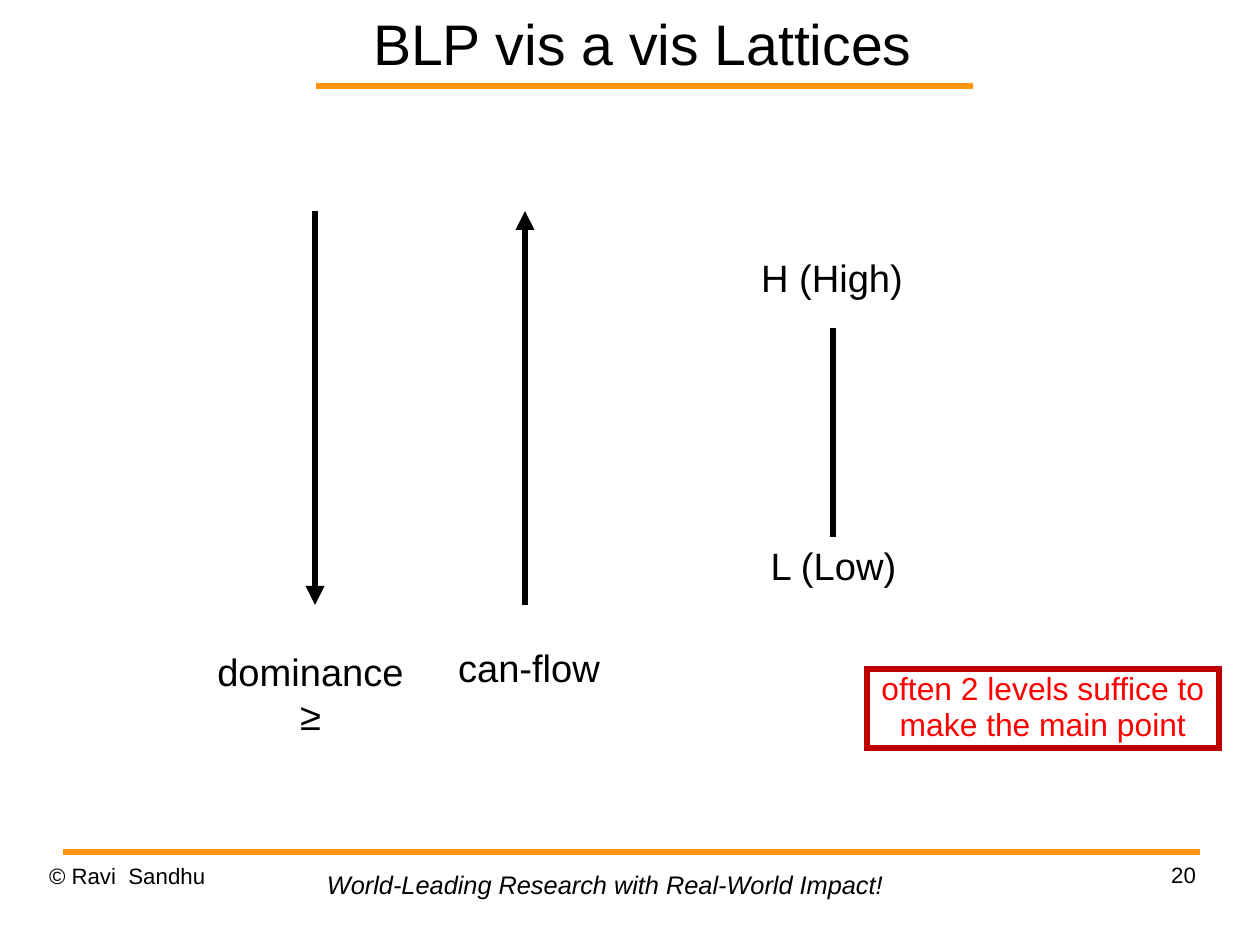
from dataclasses import dataclass

from lxml.etree import SubElement
from pptx import Presentation
from pptx.dml.color import RGBColor
from pptx.enum.shapes import MSO_CONNECTOR, MSO_SHAPE
from pptx.enum.text import MSO_ANCHOR, MSO_AUTO_SIZE, PP_ALIGN
from pptx.oxml.ns import qn
from pptx.util import Emu, Pt


@dataclass(frozen=True)
class Theme:
    """Colours, type sizes and line widths of the slide."""
    font: str = "Arial"
    ink: str = "000000"
    rule: str = "FF950E"
    border: str = "C00000"
    alert: str = "FF0000"
    title: int = 36
    label: int = 24
    callout: int = 20
    motto: int = 16
    footer: int = 14
    stroke: float = 4
    rule_stroke: float = 4.31


THEME = Theme()
EMU_PER_PX = 8000
NO_INSET = (0, 0)
LABEL_INSET = (8, 3)
MOTTO_INSET = (11, 6)


def px(length):
    """Turn whole px into EMU."""
    return Emu(length * EMU_PER_PX)


def fill_text(box, lines, size, color=THEME.ink, align=PP_ALIGN.LEFT, inset=LABEL_INSET,
              spacing=None, wrap=True, grow=False, anchor=MSO_ANCHOR.TOP, italic=False):
    """Write one paragraph per line into a box."""
    frame = box.text_frame
    frame.margin_left = frame.margin_right = px(inset[0])
    frame.margin_top = frame.margin_bottom = px(inset[1])
    frame.word_wrap = wrap
    frame.auto_size = MSO_AUTO_SIZE.SHAPE_TO_FIT_TEXT if grow else MSO_AUTO_SIZE.NONE
    frame.vertical_anchor = anchor
    for index, line in enumerate(lines):
        para = frame.add_paragraph() if index else frame.paragraphs[0]
        para.alignment = align
        if spacing:
            para.line_spacing = spacing
        span = para.add_run()
        span.text = line
        span.font.name = THEME.font
        span.font.size = Pt(size)
        span.font.italic = italic
        span.font.color.rgb = RGBColor.from_string(color)


def add_text(page, bounds, lines, size, **style):
    """Add a text box."""
    box = page.shapes.add_textbox(*map(px, bounds))
    fill_text(box, lines, size, **style)


def add_label(page, bounds, lines, spacing=0.87, align=PP_ALIGN.CENTER):
    """Add a diagram label that grows with its text."""
    add_text(page, bounds, lines, THEME.label, align=align, spacing=spacing,
             wrap=False, grow=True)


def add_line(page, start, end, color=THEME.ink, width=THEME.stroke, arrow=False):
    """Add a straight line, with an arrowhead at its end if wanted."""
    line = page.shapes.add_connector(MSO_CONNECTOR.STRAIGHT, *map(px, start + end))
    line.line.color.rgb = RGBColor.from_string(color)
    line.line.width = Pt(width)
    if arrow:
        SubElement(line.line._get_or_add_ln(), qn("a:tailEnd"), type="triangle")
    SubElement(line._element.spPr, qn("a:effectLst"))


def add_rule(page, left, right, top):
    """Add a horizontal coloured rule."""
    add_line(page, (left, top), (right, top), THEME.rule, THEME.rule_stroke)


def add_callout(page, bounds, text):
    """Add a remark in a sharp-cornered outline."""
    box = page.shapes.add_shape(MSO_SHAPE.RECTANGLE, *map(px, bounds))
    box.shadow.inherit = False
    box.fill.background()
    box.line.color.rgb = RGBColor.from_string(THEME.border)
    box.line.width = Pt(THEME.stroke)
    SubElement(box.line._get_or_add_ln(), qn("a:miter"), lim="800000")
    fill_text(box, [text], THEME.callout, color=THEME.alert, align=PP_ALIGN.CENTER,
              spacing=0.94, grow=True)


def add_frame(page):
    """Add the title, the rules and the footer."""
    add_rule(page, 316, 973, 86)
    add_rule(page, 63, 1200, 852)
    add_text(page, (275, 0, 735, 86), ["BLP vis a vis Lattices"], THEME.title,
             align=PP_ALIGN.CENTER, inset=NO_INSET, anchor=MSO_ANCHOR.MIDDLE)
    add_text(page, (49, 862, 294, 65), ["© Ravi  Sandhu"], THEME.footer,
             inset=NO_INSET, spacing=1.01)
    add_text(page, (316, 863, 581, 42), ["World-Leading Research with Real-World Impact!"],
             THEME.motto, inset=MOTTO_INSET, wrap=False, grow=True, italic=True)
    add_text(page, (902, 861, 294, 65), ["20"], THEME.footer,
             align=PP_ALIGN.RIGHT, inset=NO_INSET, spacing=1.01)


def add_diagram(page):
    """Add the two direction arrows and the two-level lattice."""
    top, bottom = 211, 605
    add_line(page, (525, bottom), (525, top), arrow=True)
    add_label(page, (450, 648, 177, 53), ["can-flow"], align=PP_ALIGN.LEFT)
    add_label(page, (199, 648, 223, 102), ["dominance", "≥"], spacing=0.97)
    add_line(page, (315, top), (315, bottom), arrow=True)
    add_callout(page, (867, 669, 352, 79), "often 2 levels suffice to make the main point")
    add_label(page, (752, 258, 160, 47), ["H (High)"])
    add_label(page, (762, 546, 143, 47), ["L (Low)"])
    add_line(page, (833, 328), (833, 537))


def main():
    """Build and save the slide."""
    deck = Presentation()
    deck.slide_width, deck.slide_height = px(1260), px(945)
    page = deck.slides.add_slide(deck.slide_layouts[6])
    add_frame(page)
    add_diagram(page)
    deck.save("out.pptx")


if __name__ == "__main__":
    main()
